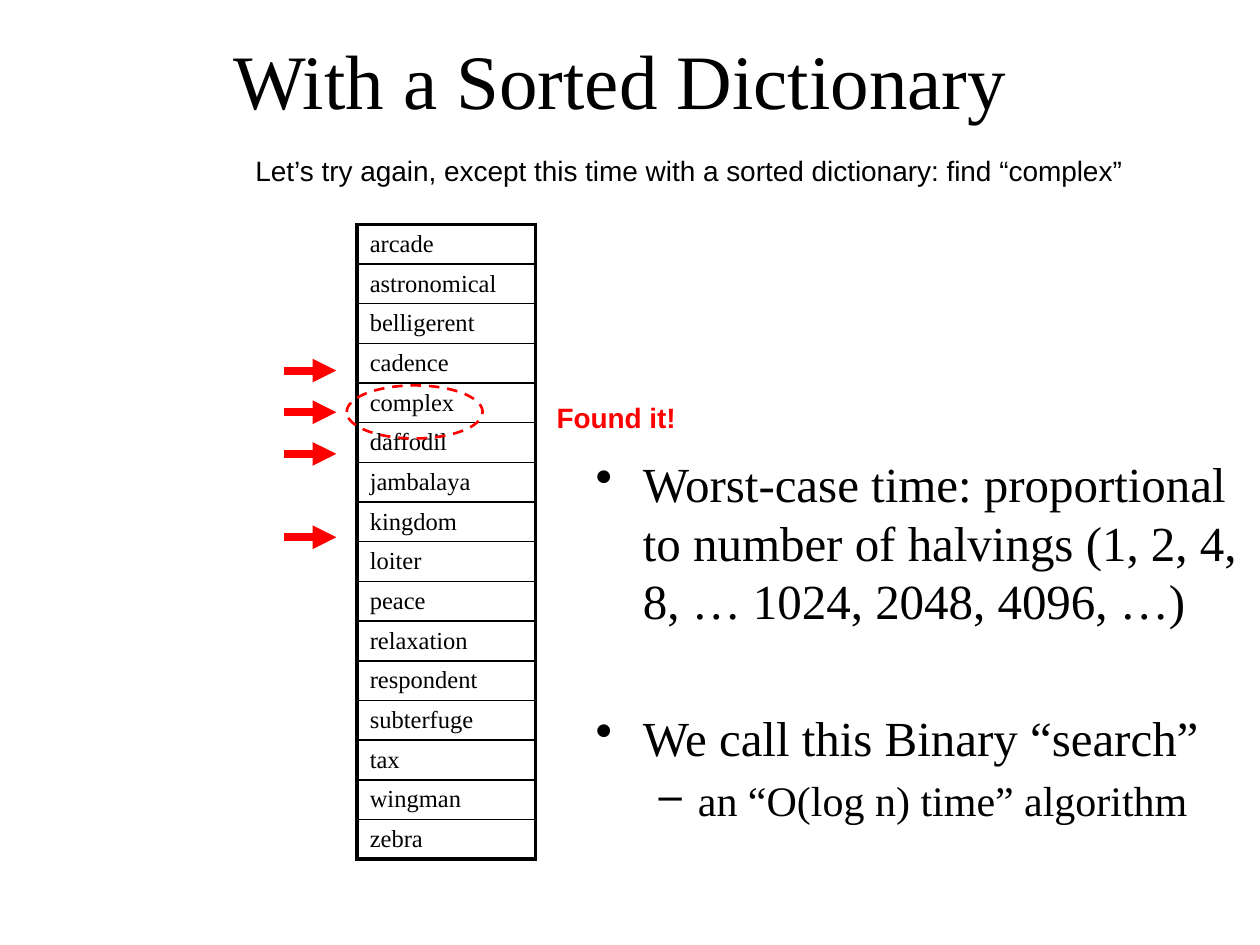
from lxml import etree
from pptx import Presentation
from pptx import util as u
from pptx.dml import color
from pptx.enum import dml, shapes, text
from pptx.oxml import ns

COLORS = {"ink": "000000", "mark": "FF0000"}
SERIF, SANS = "Times New Roman", "Arial"
WORDS = ["arcade", "astronomical", "belligerent", "cadence", "complex", "daffodil",
         "jambalaya", "kingdom", "loiter", "peace", "relaxation", "respondent",
         "subterfuge", "tax", "wingman", "zebra"]


def write(paragraph, content, size, font=SERIF, ink="ink", bold=False, align=None,
          bullet=None, level=0, margin=0, hanging=0, before=None, line=None):
    if bullet:
        properties = paragraph._p.get_or_add_pPr()
        properties.set("marL", str(u.Cm(margin)))
        properties.set("indent", str(-u.Cm(hanging)))
        etree.SubElement(properties, ns.qn("a:buChar")).set("char", bullet)
        paragraph.level = level
    if align is not None:
        paragraph.alignment = align
    if before is not None:
        paragraph.space_before = u.Pt(before)
    if line is not None:
        paragraph.line_spacing = u.Pt(line)
    run = paragraph.add_run()
    run.text = content
    run.font.size = u.Pt(size)
    run.font.name = font
    run.font.bold = bold
    run.font.color.rgb = color.RGBColor.from_string(COLORS[ink])


def add_border(cell, side, width):
    border = etree.SubElement(cell._tc.get_or_add_tcPr(), ns.qn(f"a:ln{side}"), w=str(u.Pt(width)))
    fill = etree.SubElement(border, ns.qn("a:solidFill"))
    etree.SubElement(fill, ns.qn("a:srgbClr"), val=COLORS["ink"])


presentation = Presentation()
presentation.slide_width, presentation.slide_height = u.Cm(25.4), u.Cm(19.05)
slide = presentation.slides.add_slide(presentation.slide_layouts[5])

# Title
title = slide.shapes.title
title.left, title.top, title.width, title.height = u.Cm(1.7), u.Cm(0), u.Cm(21.6), u.Cm(3.18)
title.text_frame.vertical_anchor = text.MSO_ANCHOR.MIDDLE
write(title.text_frame.paragraphs[0], "With a Sorted Dictionary", 44, align=text.PP_ALIGN.CENTER)

# Conclusions
body = slide.shapes.add_textbox(u.Cm(11.76), u.Cm(7.62), u.Cm(13.64), u.Cm(11.43))
frame = body.text_frame
frame.word_wrap = True
frame.margin_top = u.Cm(1.52)
write(frame.paragraphs[0],
      "Worst-case time: proportional to number of halvings (1, 2, 4, 8, … 1024, 2048, 4096, …)",
      28, bullet="•", margin=0.95, hanging=0.95, line=33.6)
write(frame.add_paragraph(), "We call this Binary “search”", 28,
      bullet="•", margin=0.95, hanging=0.95, before=44.6, line=33.6)
write(frame.add_paragraph(), "an “O(log n) time” algorithm", 24,
      bullet="–", level=1, margin=2.06, hanging=0.79, before=4.8, line=28.8)

# Sorted dictionary
row_height = 0.8
table = slide.shapes.add_table(len(WORDS), 1, u.Cm(7.2), u.Cm(4.52), u.Cm(3.6),
                               u.Cm(row_height * len(WORDS))).table
table.first_row = table.horz_banding = False
for index, word in enumerate(WORDS):
    table.rows[index].height = u.Cm(row_height)
    cell = table.cell(index, 0)
    cell.margin_top = cell.margin_bottom = u.Cm(0.1)
    cell.vertical_anchor = text.MSO_ANCHOR.MIDDLE
    write(cell.text_frame.paragraphs[0], word, 14)
    add_border(cell, "L", 2.25)
    add_border(cell, "R", 2.25)
    add_border(cell, "T", 2.25 if index == 0 else 1)
    add_border(cell, "B", 2.25 if index == len(WORDS) - 1 else 1)
    cell.fill.background()

# Prompt and result
for content, left, top, width, options in [
    ("Let’s try again, except this time with a sorted dictionary: find “complex”",
     4.9, 2.97, 18.06, {}),
    ("Found it!", 10.97, 7.95, 2.92, {"ink": "mark", "bold": True}),
]:
    label = slide.shapes.add_textbox(u.Cm(left), u.Cm(top), u.Cm(width), u.Cm(0.94))
    label.text_frame.word_wrap = False
    label.text_frame.auto_size = text.MSO_AUTO_SIZE.SHAPE_TO_FIT_TEXT
    write(label.text_frame.paragraphs[0], content, 16, font=SANS, **options)

# Arrows at the probed words
for step in (0, 1, 2, 4):
    height = u.Cm(7.47 + 0.84 * step)
    arrow = slide.shapes.add_connector(shapes.MSO_CONNECTOR.STRAIGHT,
                                       u.Cm(5.72), height, u.Cm(6.78), height)
    arrow.line.color.rgb = color.RGBColor.from_string(COLORS["mark"])
    arrow.line.width = u.Pt(4.5)
    etree.SubElement(arrow.line._get_or_add_ln(), ns.qn("a:tailEnd"), type="triangle")
    etree.SubElement(arrow._element.spPr, ns.qn("a:effectLst"))

# Ring around the found word
ring = slide.shapes.add_shape(shapes.MSO_SHAPE.OVAL, u.Cm(6.99), u.Cm(7.77), u.Cm(2.74), u.Cm(1.07))
ring.shadow.inherit = False
ring.fill.background()
ring.line.color.rgb = color.RGBColor.from_string(COLORS["mark"])
ring.line.width = u.Pt(1.5)
ring.line.dash_style = dml.MSO_LINE.DASH

presentation.save("out.pptx")
